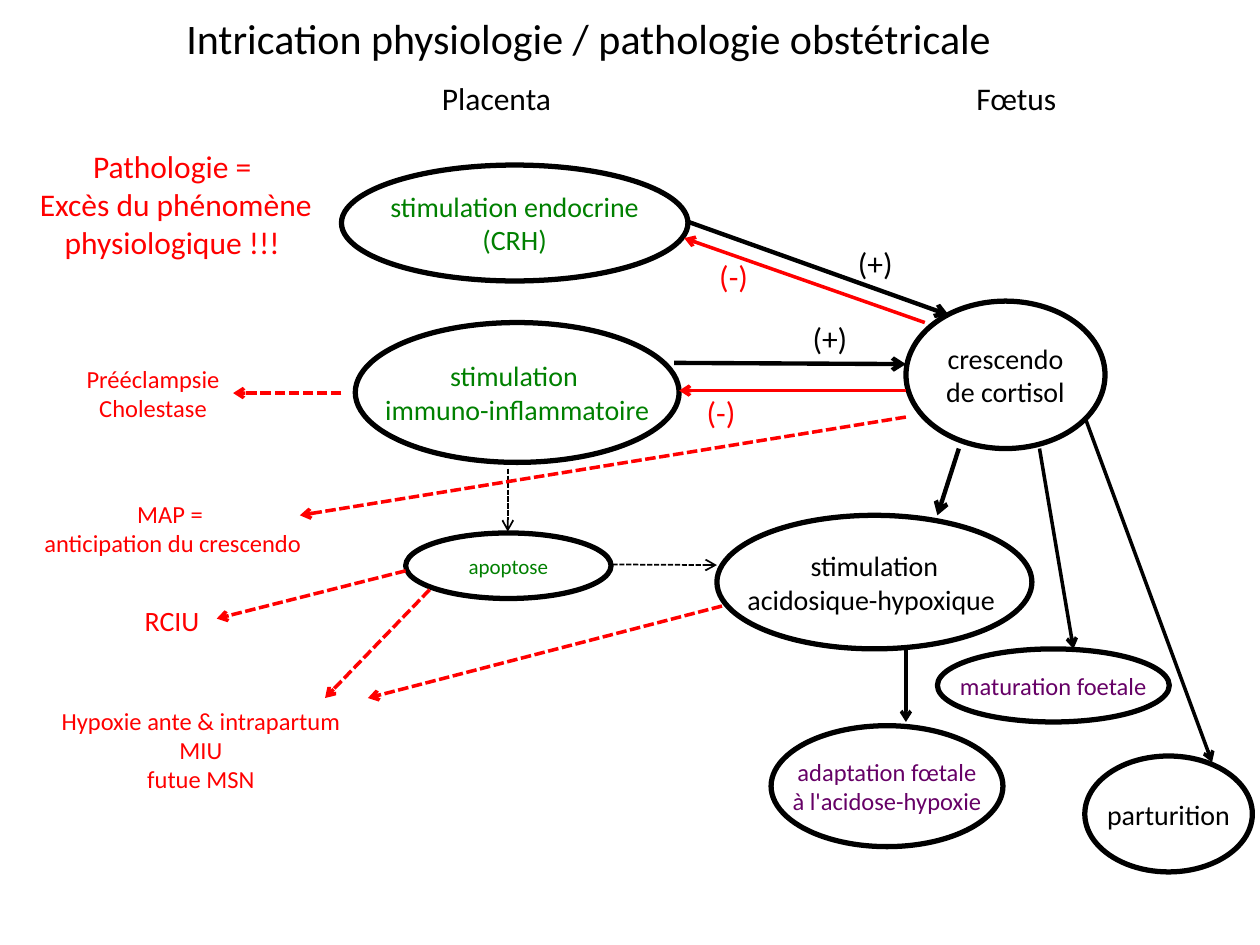
from lxml.etree import SubElement
from pptx import Presentation
from pptx.dml.color import RGBColor
from pptx.enum.dml import MSO_LINE
from pptx.enum.shapes import MSO_CONNECTOR, MSO_SHAPE
from pptx.enum.text import MSO_ANCHOR, PP_ALIGN
from pptx.oxml.ns import qn
from pptx.util import Inches, Pt

BLACK = RGBColor(0, 0, 0)
WHITE = RGBColor(255, 255, 255)
RED = RGBColor(255, 0, 0)
GREEN = RGBColor(0, 128, 0)
PURPLE = RGBColor(102, 0, 102)
FONT = "Calibri"

# The slide is a grid of 100 columns by 75 rows of square cells
COLUMNS, ROWS = 100, 75
CELL = Inches(0.1)

# left, top, width, height, lines, size, colour, opacity in percent
STAGES = [
    (27.1, 13.1, 27.5, 9.2, ["stimulation endocrine", "(CRH)"], 16, GREEN, 100),
    (71.9, 23.9, 15.8, 11.7, ["crescendo", "de cortisol"], 16, BLACK, 100),
    (28.2, 25.6, 25.7, 11.1, ["stimulation ", "immuno-inflammatoire"], 16, GREEN, 100),
    (86.1, 60, 13.3, 9.2, ["parturition"], 16, BLACK, 100),
    (56.9, 40.9, 25, 10.6, ["stimulation", "acidosique-hypoxique "], 16, BLACK, 100),
    (61.2, 57.6, 18.4, 9.6, ["adaptation fœtale", "à l'acidose-hypoxie"], 14, PURPLE, 81),
    (74.4, 51.5, 18.4, 5.8, ["maturation foetale"], 14, PURPLE, 81),
    (32.2, 42.3, 16.3, 5.2, ["apoptose"], 12, GREEN, 100),
]

# (colour, width, dashed): list of (from column, from row, to column, to row)
PATHWAYS = {
    # Stimulation of the fetal axis
    (BLACK, 2.5, False): [(53.5, 28.8, 71.9, 28.9), (54.6, 17.6, 75.3, 25),
                          (76.1, 35.6, 74.4, 40.9)],
    # Effects on the fetus and on labour
    (BLACK, 2, False): [(86.1, 33.1, 96.2, 60.5), (71.9, 51.5, 71.9, 57.3),
                        (82.5, 35.6, 85.2, 51.5)],
    # Negative feedback
    (RED, 2, False): [(71.9, 31, 53.9, 31), (73.4, 25.6, 54.3, 18.9)],
    # Apoptosis
    (BLACK, 1, True): [(40.3, 37.2, 40.3, 42.2), (48.6, 44.8, 56.9, 44.85)],
    # Drift towards pathology
    (RED, 2, True): [(71.9, 33.1, 23.8, 40.9), (27.1, 31.2, 18.5, 31.2),
                     (32.2, 45.3, 17.2, 49.1), (57.3, 48.1, 29.2, 55.4),
                     (34.1, 46.8, 25.8, 55.4)],
}

# left, top, width, height, lines, size, colour
HEADINGS = [
    (13.8, 0.5, 66.9, 5, ["Intrication physiologie / pathologie obstétricale"], 24, BLACK),
    (34.1, 5.8, 11, 4, ["Placenta"], 18, BLACK),
    (76.5, 5.8, 9, 4, ["Fœtus"], 18, BLACK),
]
SIGNS = [
    (67.1, 18.9, 4.8, 4, ["(+)"], 18, BLACK),
    (63.5, 24.8, 4.8, 4, ["(+)"], 18, BLACK),
    (56.1, 19.9, 6.1, 4, ["(-)"], 18, RED),
    (55.1, 30.7, 6.1, 4, ["(-)"], 18, RED),
    (10.5, 47.4, 6.4, 3.7, ["RCIU"], 16, RED),
]
PATHOLOGIES = [
    (2, 11.2, 23.9, 10.1,
     ["Pathologie = ", "Excès du phénomène ", "physiologique !!! "], 18, RED),
    (5.8, 28.4, 12.7, 5.7, ["Prééclampsie", "Cholestase"], 14, RED),
    (2, 39.1, 23, 5.7, ["MAP =", " anticipation du crescendo"], 14, RED),
    (3.8, 55.5, 24.3, 8.1,
     ["Hypoxie ante & intrapartum", "MIU", "futue MSN"], 14, RED),
]


def cells(*counts):
    return [round(count * CELL) for count in counts]


def write_lines(frame, lines, size, colour, align):
    frame.word_wrap = False
    for index, line in enumerate(lines):
        paragraph = frame.paragraphs[0] if index == 0 else frame.add_paragraph()
        paragraph.alignment = align
        run = paragraph.add_run()
        run.text = line
        run.font.name = FONT
        run.font.size = Pt(size)
        run.font.color.rgb = colour


def add_stage(slide, left, top, width, height, lines, size, colour, opacity):
    stage = slide.shapes.add_shape(MSO_SHAPE.OVAL, *cells(left, top, width, height))
    stage.shadow.inherit = False
    stage.fill.solid()
    stage.fill.fore_color.rgb = WHITE
    if opacity < 100:
        white = stage.element.spPr.find(qn("a:solidFill")).find(qn("a:srgbClr"))
        SubElement(white, qn("a:alpha"), val=str(opacity * 1000))
    stage.line.color.rgb = BLACK
    stage.line.width = Pt(3)
    stage.text_frame.vertical_anchor = MSO_ANCHOR.MIDDLE
    write_lines(stage.text_frame, lines, size, colour, PP_ALIGN.CENTER)


def add_arrow(slide, ends, colour, width, dashed):
    arrow = slide.shapes.add_connector(MSO_CONNECTOR.STRAIGHT, *cells(*ends))
    arrow.line.color.rgb = colour
    arrow.line.width = Pt(width)
    if dashed:
        arrow.line.dash_style = MSO_LINE.SQUARE_DOT  # saved as sysDash
    properties = arrow.element.spPr
    SubElement(properties.find(qn("a:ln")), qn("a:tailEnd"), type="arrow")
    SubElement(properties, qn("a:effectLst"))


def add_label(slide, left, top, width, height, lines, size, colour, align):
    label = slide.shapes.add_textbox(*cells(left, top, width, height))
    write_lines(label.text_frame, lines, size, colour, align)


def main():
    deck = Presentation()
    deck.slide_width, deck.slide_height = cells(COLUMNS, ROWS)
    slide = deck.slides.add_slide(deck.slide_layouts[6])

    # Physiological stages
    for stage in STAGES:
        add_stage(slide, *stage)

    # Links between stages and towards pathologies
    for style, links in PATHWAYS.items():
        for ends in links:
            add_arrow(slide, ends, *style)

    # Headings, signs and pathologies
    for label in HEADINGS + SIGNS:
        add_label(slide, *label, PP_ALIGN.LEFT)
    for label in PATHOLOGIES:
        add_label(slide, *label, PP_ALIGN.CENTER)

    deck.save("out.pptx")


if __name__ == "__main__":
    main()
